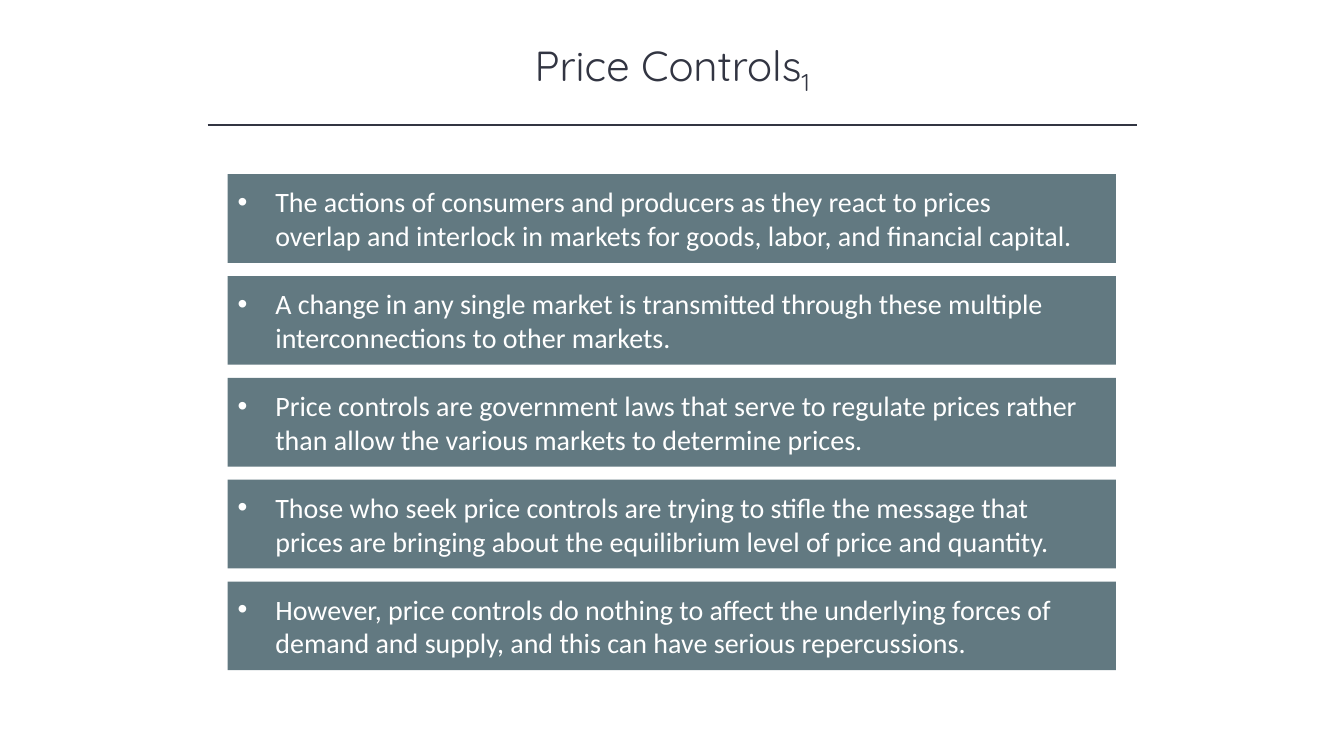
from lxml import etree
from pptx import Presentation
from pptx import util as u
from pptx.dml.color import RGBColor
from pptx.enum import shapes, text
from pptx.oxml.ns import qn

INK = RGBColor(0x32, 0x35, 0x42)
SLATE = RGBColor(0x62, 0x79, 0x81)
WHITE = RGBColor(0xFF, 0xFF, 0xFF)

TITLE_FORMAT = {"name": "Quicksand", "size": u.Pt(30), "bold": False}
POINT_FORMAT = {"name": "Calibri", "size": u.Pt(20), "bold": False}

POINTS = [
    "The actions of consumers and producers as they react to prices overlap "
    "and interlock in markets for goods, labor, and financial capital.",
    "A change in any single market is transmitted through these multiple "
    "interconnections to other markets.",
    "Price controls are government laws that serve to regulate prices rather "
    "than allow the various markets to determine prices.",
    "Those who seek price controls are trying to stifle the message that "
    "prices are bringing about the equilibrium level of price and quantity.",
    "However, price controls do nothing to affect the underlying forces of "
    "demand and supply, and this can have serious repercussions.",
]


def format_font(font, settings, color):
    for name, value in settings.items():
        setattr(font, name, value)
    font.color.rgb = color


def add_heading(slide, left, top, width, height):
    """Title with a subscript number, and the rule beneath it."""
    heading = slide.shapes.title
    heading.left, heading.top, heading.width, heading.height = left, top, width, height
    heading.text_frame.vertical_anchor = text.MSO_ANCHOR.MIDDLE
    line = heading.text_frame.paragraphs[0]
    line.alignment = text.PP_ALIGN.CENTER
    for words, baseline in (("Price Controls", None), ("1", "-25000")):
        part = line.add_run()
        part.text = words
        format_font(part.font, TITLE_FORMAT, INK)
        if baseline:
            part._r.get_or_add_rPr().set("baseline", baseline)

    # Rule
    inset = u.Cm(0.99)
    rule_top = top + u.Cm(2.21)
    rule = slide.shapes.add_connector(
        shapes.MSO_CONNECTOR.STRAIGHT,
        left + inset, rule_top, left + width - inset, rule_top)
    rule.line.color.rgb = INK
    rule.line.width = u.Pt(1)
    etree.SubElement(rule._element.spPr, qn("a:effectLst"))


def add_point(slide, words, left, top, width, height):
    """One filled bar holding a bulleted statement."""
    bar = slide.shapes.add_shape(
        shapes.MSO_SHAPE.RECTANGLE, left, top, width, height)
    bar.shadow.inherit = False
    bar.fill.solid()
    bar.fill.fore_color.rgb = SLATE
    bar.line.fill.background()

    frame = bar.text_frame
    frame.word_wrap = True
    frame.vertical_anchor = text.MSO_ANCHOR.MIDDLE
    frame.margin_right = u.Cm(0.94)
    statement = frame.paragraphs[0]
    statement.text = words
    statement.alignment = text.PP_ALIGN.LEFT

    # Hanging bullet
    properties = statement._p.get_or_add_pPr()
    indent = u.Cm(0.95)
    properties.set("marL", str(indent))
    properties.set("indent", str(-indent))
    etree.SubElement(properties, qn("a:buFont")).set("typeface", "Arial")
    etree.SubElement(properties, qn("a:buChar")).set("char", "•")
    format_font(statement.font, POINT_FORMAT, WHITE)


def add_points(slide, left, top, width, height):
    """Equal bars stacked with equal gaps."""
    gap = u.Cm(0.33)
    bar_height = (height - gap * (len(POINTS) - 1)) // len(POINTS)
    for row, words in enumerate(POINTS):
        add_point(slide, words, left, top + row * (bar_height + gap), width, bar_height)


def main():
    deck = Presentation()
    deck.slide_width, deck.slide_height = u.Cm(33.87), u.Cm(19.05)
    slide = deck.slides.add_slide(deck.slide_layouts[5])
    add_heading(slide, u.Cm(4.24), u.Cm(0.94), u.Cm(25.4), u.Cm(1.55))
    add_points(slide, u.Cm(5.74), u.Cm(4.39), u.Cm(22.38), u.Cm(12.5))
    deck.save("out.pptx")


if __name__ == "__main__":
    main()
